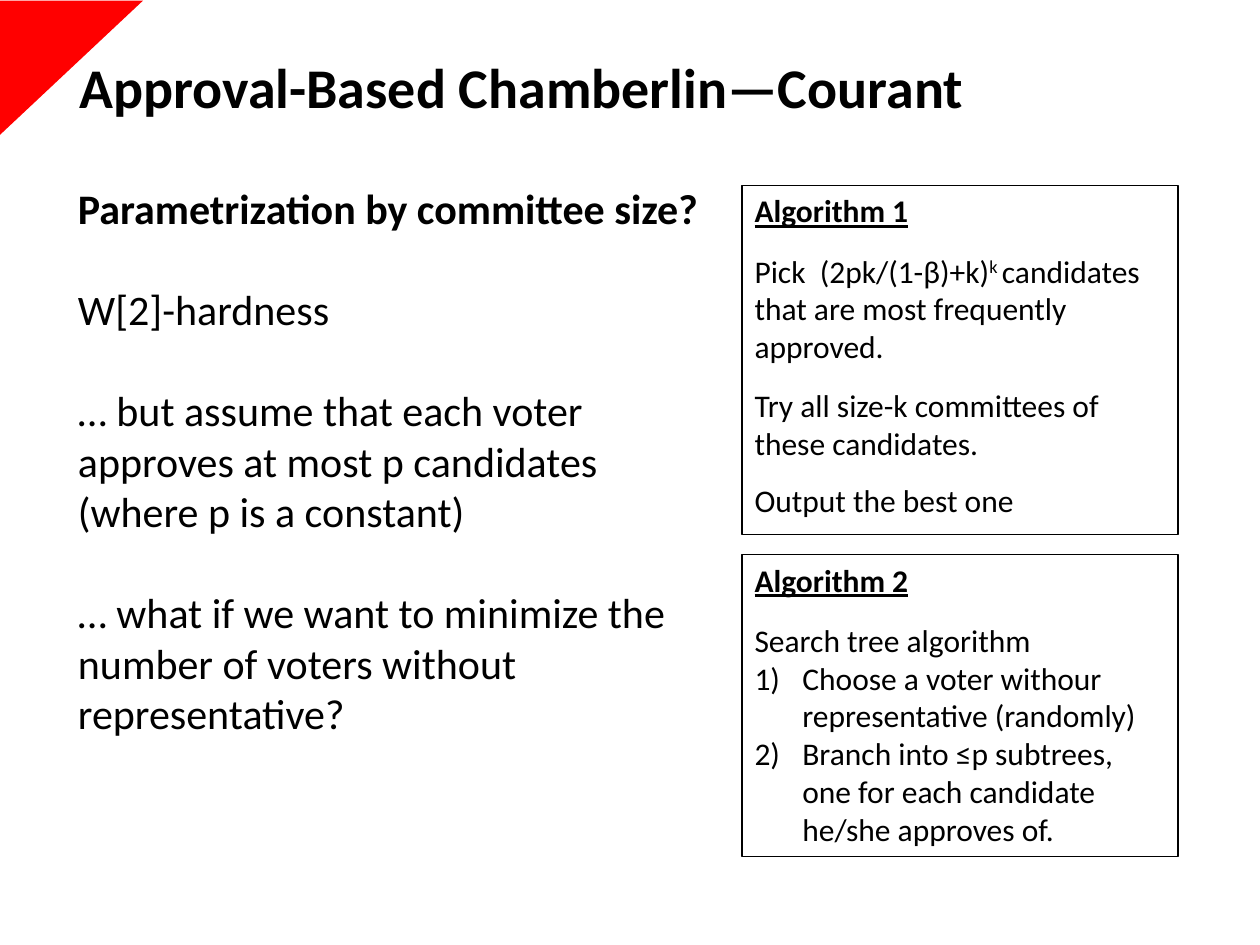
from pptx import Presentation
from pptx.dml.color import RGBColor
from pptx.enum.shapes import MSO_SHAPE
from pptx.enum.text import MSO_ANCHOR, PP_ALIGN
from pptx.util import Inches, Pt
from lxml import etree

RECT = MSO_SHAPE.RECTANGLE
CORNER = MSO_SHAPE.RIGHT_TRIANGLE
TOP, MIDDLE = MSO_ANCHOR.TOP, MSO_ANCHOR.MIDDLE
LEFT = PP_ALIGN.LEFT
BLACK = RGBColor(0, 0, 0)
RED = RGBColor(255, 0, 0)
A = "http://schemas.openxmlformats.org/drawingml/2006/main"


def write(frame, text, size=18, bold=False, line=False, gap=0, number=False):
    """Add a paragraph; parts between ^ marks are superscript."""
    par = frame.paragraphs[0]
    if par.runs:
        par = frame.add_paragraph()
    par.alignment = LEFT
    par.space_before = Pt(gap)
    if number:
        props = par._p.get_or_add_pPr()
        props.set("marL", str(Inches(0.38)))
        props.set("indent", str(-Inches(0.38)))
        etree.SubElement(props, f"{{{A}}}buFont", typeface="+mj-lt")
        etree.SubElement(props, f"{{{A}}}buAutoNum", type="arabicParenR")
    for i, part in enumerate(text.split("^")):
        run = par.add_run()
        run.text = part
        font = run.font
        font.name = "Calibri"
        font.size = Pt(size)
        font.bold = bold
        font.underline = line
        font.color.rgb = BLACK
        if i % 2:
            font._element.set("baseline", "30000")


def add_text(left, top, width, height, anchor=TOP):
    box = slide.shapes.add_textbox(
        Inches(left), Inches(top), Inches(width), Inches(height))
    box.text_frame.word_wrap = True
    box.text_frame.vertical_anchor = anchor
    return box.text_frame


prs = Presentation()
prs.slide_width, prs.slide_height = Inches(10), Inches(7.5)
slide = prs.slides.add_slide(prs.slide_layouts[6])

# Red corner
corner = slide.shapes.add_shape(
    CORNER, Inches(0.03), Inches(-0.03), Inches(1.07), Inches(1.14))
corner.rotation = 90
corner.shadow.inherit = False
corner.fill.solid()
corner.fill.fore_color.rgb = RED
corner.line.fill.background()

# Title
title = add_text(0.53, 0.29, 9.47, 0.79, MIDDLE)
write(title, "Approval-Based Chamberlin—Courant", size=32, bold=True)

# Questions on the left
body = add_text(0.52, 1.4, 5.15, 4.54)
write(body, "Parametrization by committee size?", size=24, bold=True)
for text in (
    "W[2]-hardness",
    "… but assume that each voter approves at most p candidates "
    "(where p is a constant)",
    "… what if we want to minimize the number of voters without "
    "representative?",
):
    write(body, text, size=24, gap=29)

# Algorithms on the right: top, height, heading, steps (text, gap, number)
ALGOS = [
    (1.47, 2.77, "Algorithm 1", [
        ("Pick  (2pk/(1-β)+k)^k ^candidates that are most frequently "
         "approved.", 12.8, False),
        ("Try all size-k committees of these candidates.", 12, False),
        ("Output the best one", 11, False),
    ]),
    (4.4, 2.4, "Algorithm 2", [
        ("Search tree algorithm", 12.8, False),
        ("Choose a voter withour representative (randomly)", 0, True),
        ("Branch into ≤p subtrees, one for each candidate he/she "
         "approves of.", 0, True),
    ]),
]
for top, height, head, steps in ALGOS:
    card = slide.shapes.add_shape(
        RECT, Inches(5.89), Inches(top), Inches(3.46), Inches(height))
    card.shadow.inherit = False
    card.fill.background()
    card.line.color.rgb = BLACK
    card.line.width = Pt(0.75)
    frame = card.text_frame
    frame.word_wrap = True
    frame.vertical_anchor = TOP
    write(frame, head, bold=True, line=True)
    for text, gap, number in steps:
        write(frame, text, gap=gap, number=number)

prs.save("out.pptx")
